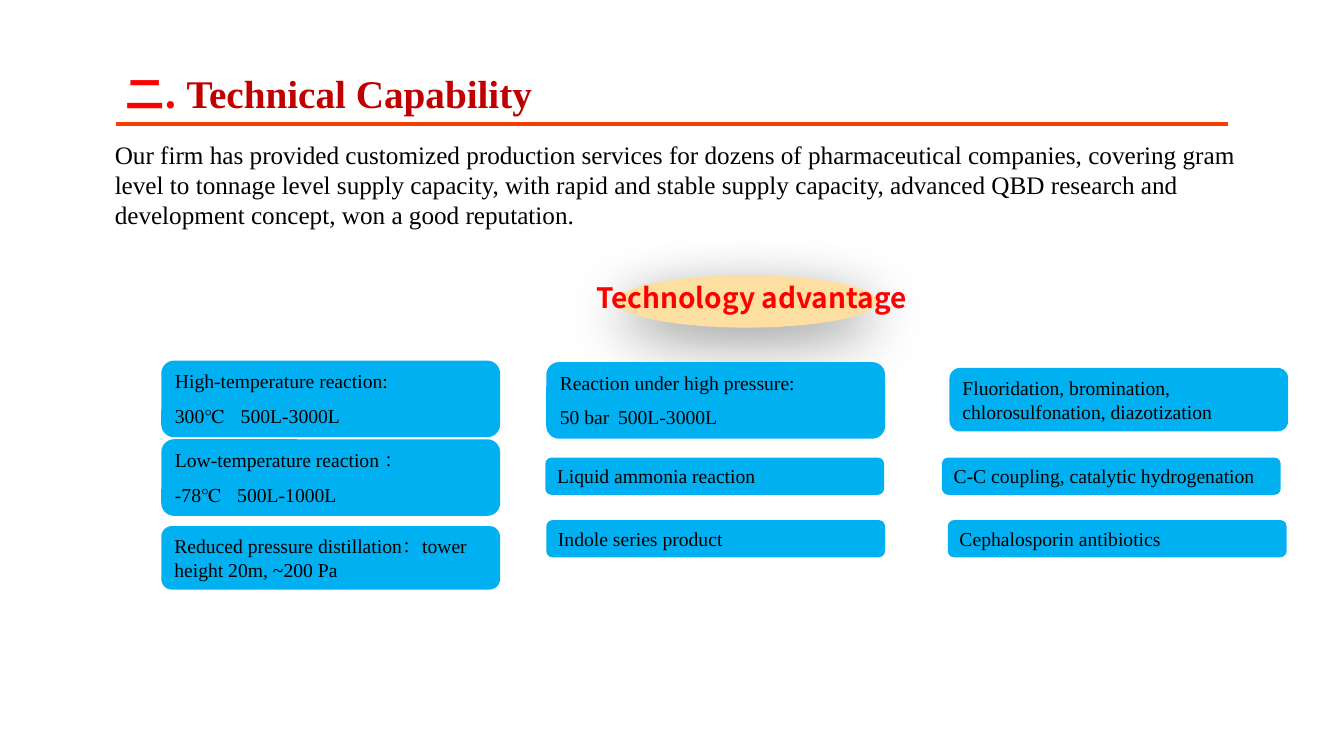
from lxml.etree import SubElement
from pptx import Presentation
from pptx.dml.color import RGBColor
from pptx.enum.shapes import MSO_CONNECTOR as Connector, MSO_SHAPE as Shape
from pptx.enum.text import MSO_ANCHOR as Anchor, MSO_AUTO_SIZE as AutoSize, PP_ALIGN as Align
from pptx.oxml.ns import qn
from pptx.util import Pt

SERIF = "Times New Roman"
BLACK, RED, DARK_RED = "000000", "FF0000", "C00000"
ORANGE, CREAM, BLUE = "F73C00", "FEDFA2", "00B0F0"

CARD_WIDTH = 242
ONE_LINE, TWO_LINES, TWO_PARAGRAPHS = 26.6, 45.4, 54.7

# Left, top, height, paragraphs, tab stop of the capacity value
CARDS = [
    (115.2, 257.6, TWO_PARAGRAPHS, ["High-temperature reaction:", "300℃\t500L-3000L"], 47),
    (115.2, 313.8, TWO_PARAGRAPHS, ["Low-temperature reaction ：", "-78℃\t500L-1000L"], 44.5),
    (115.2, 375.8, TWO_LINES,
     ["Reduced pressure distillation：tower height 20m, ~200 Pa"], None),
    (390.2, 258.7, TWO_PARAGRAPHS, ["Reaction under high pressure:", "50 bar\t500L-3000L"], 41.5),
    (389.5, 326.9, ONE_LINE, ["Liquid ammonia reaction"], None),
    (390.2, 371.5, ONE_LINE, ["Indole series product"], None),
    (678.2, 262.8, TWO_LINES,
     ["Fluoridation, bromination, chlorosulfonation, diazotization"], None),
    (672.8, 326.9, ONE_LINE, ["C-C coupling, catalytic hydrogenation"], None),
    (677, 371.5, ONE_LINE, ["Cephalosporin antibiotics"], None),
]


def color(value):
    return RGBColor.from_string(value)


def add_text(para, text, size=14, font=SERIF, fill=BLACK, bold=False):
    span = para.add_run()
    span.text = text
    span.font.size, span.font.name, span.font.bold = Pt(size), font, bold
    span.font.color.rgb = color(fill)
    SubElement(span.font._element, qn("a:ea"), typeface=font)


def prepare_frame(shape, anchor=Anchor.TOP):
    frame = shape.text_frame
    frame.word_wrap = True
    frame.auto_size = AutoSize.SHAPE_TO_FIT_TEXT
    frame.vertical_anchor = anchor
    return frame


def add_box(page, left, top, width, height, anchor=Anchor.TOP):
    box = page.shapes.add_textbox(Pt(left), Pt(top), Pt(width), Pt(height))
    return prepare_frame(box, anchor).paragraphs[0]


def add_filled(page, kind, left, top, width, height, fill):
    shape = page.shapes.add_shape(kind, Pt(left), Pt(top), Pt(width), Pt(height))
    shape.shadow.inherit = False
    shape.fill.solid()
    shape.fill.fore_color.rgb = color(fill)
    shape.line.fill.background()
    return shape


def add_card(page, left, top, height, lines, tab_stop):
    card = add_filled(page, Shape.ROUNDED_RECTANGLE, left, top, CARD_WIDTH, height, BLUE)
    frame = prepare_frame(card)
    for number, line in enumerate(lines):
        para = frame.add_paragraph() if number else frame.paragraphs[0]
        para.alignment = Align.LEFT
        if number:
            para.space_before = Pt(7.8)
        if "\t" in line:
            tabs = SubElement(para._p.get_or_add_pPr(), qn("a:tabLst"))
            SubElement(tabs, qn("a:tab"), pos=str(Pt(tab_stop)), algn="l")
        add_text(para, line)


def add_rule(page, left, top, right):
    rule = page.shapes.add_connector(Connector.STRAIGHT, Pt(left), Pt(top), Pt(right), Pt(top))
    rule.line.color.rgb = color(ORANGE)
    rule.line.width = Pt(2.25)
    SubElement(rule._element.spPr, qn("a:effectLst"))


def add_soft_shadow(shape):
    effects = shape._element.spPr.find(qn("a:effectLst"))
    shadow = SubElement(effects, qn("a:outerShdw"), blurRad=str(Pt(42)), dist=str(Pt(10)),
                        dir="5400000", algn="ctr", rotWithShape="0")
    tint = SubElement(shadow, qn("a:srgbClr"), val=BLACK)
    SubElement(tint, qn("a:alpha"), val="40000")


def main():
    deck = Presentation()
    deck.slide_width, deck.slide_height = Pt(960), Pt(540)
    page = deck.slides.add_slide(deck.slide_layouts[6])

    # Heading
    add_rule(page, 82.8, 88.6, 877)
    title = add_box(page, 82.8, 47.5, 870.5, 39.6, Anchor.BOTTOM)
    title.line_spacing = 0.95
    add_text(title, "二. ", size=28, font="Noto Sans CJK SC", fill=RED, bold=True)
    add_text(title, "Technical Capability", size=28, fill=DARK_RED, bold=True)

    # Introduction
    intro = add_box(page, 74.9, 95.8, 838, 72.7)
    add_text(intro, "Our firm has provided customized production services for dozens of "
             "pharmaceutical companies, covering gram level to tonnage level supply capacity, "
             "with rapid and stable supply capacity, advanced QBD research and development "
             "concept, won a good reputation.", size=18)

    # Technology label
    ellipse = add_filled(page, Shape.OVAL, 440.6, 196.6, 185.8, 37.4, CREAM)
    add_soft_shadow(ellipse)
    label = add_box(page, 406.8, 196.6, 260, 31.7)
    label.alignment = Align.CENTER
    add_text(label, "Technology advantage", size=20, font="Noto Sans CJK JP", fill=RED, bold=True)

    # Capability cards
    for card in CARDS:
        add_card(page, *card)

    deck.save("out.pptx")


if __name__ == "__main__":
    main()
